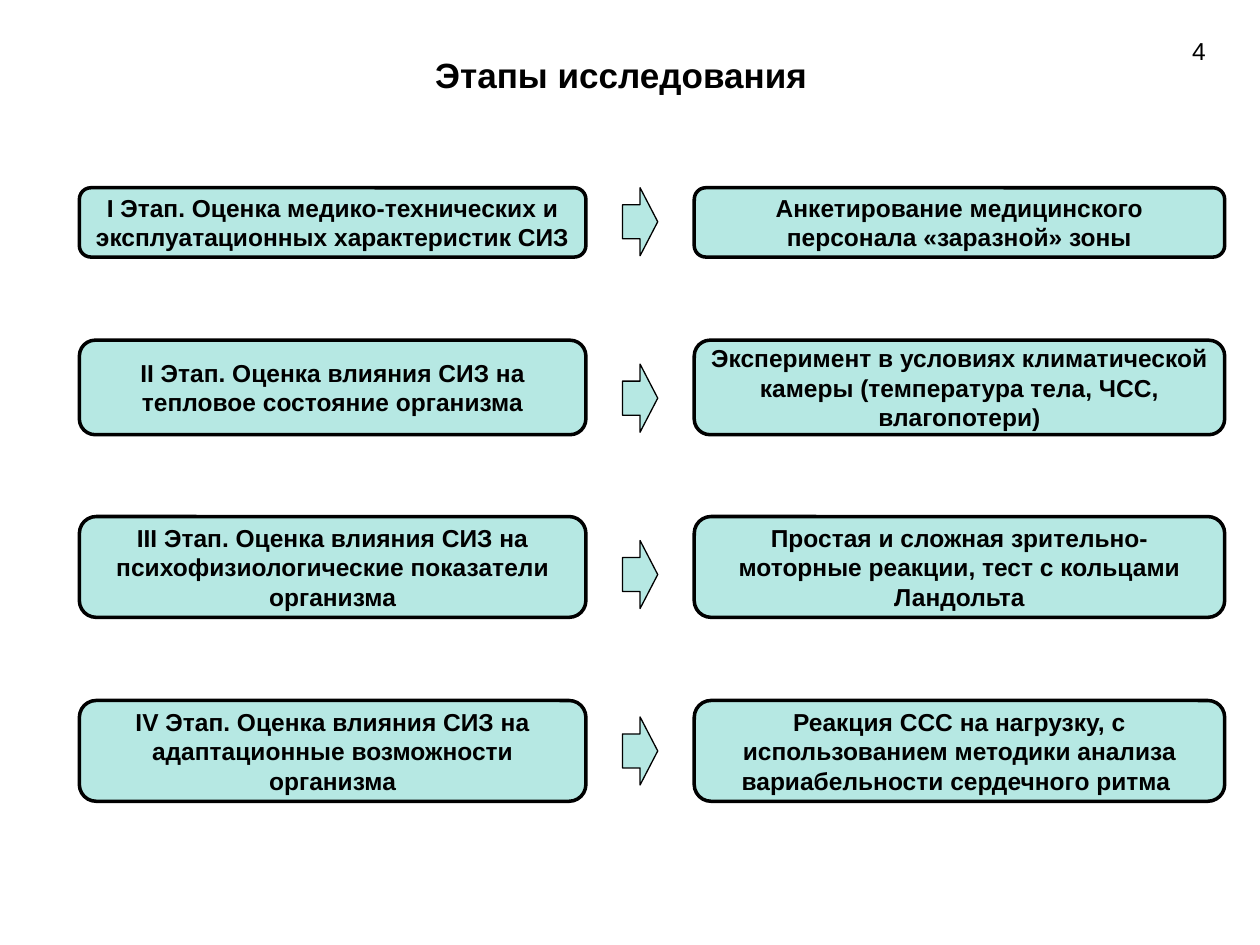
from pptx import Presentation
from pptx.dml.color import RGBColor
from pptx.enum.shapes import MSO_SHAPE
from pptx.enum.text import MSO_ANCHOR, PP_ALIGN
from pptx.util import Inches, Pt

COLORS = {"fill": "B6E8E3", "ink": "000000"}
FRAME = {
    "word_wrap": True,
    "margin_left": Inches(0.08),
    "margin_right": Inches(0.08),
    "margin_top": Inches(0.03),
    "margin_bottom": Inches(0.03),
}

# top and height of each row, stage, method
STAGES = [
    (1.49, 0.55, "I Этап. Оценка медико-технических и эксплуатационных характеристик СИЗ",
     "Анкетирование медицинского персонала «заразной» зоны"),
    (2.7, 0.75, "II Этап. Оценка влияния СИЗ на тепловое состояние организма",
     "Эксперимент в условиях климатической камеры (температура тела, ЧСС, влагопотери)"),
    (4.1, 0.8, "III Этап. Оценка влияния СИЗ на психофизиологические показатели организма",
     "Простая и сложная зрительно-моторные реакции, тест с кольцами Ландольта"),
    (5.56, 0.8, "IV Этап. Оценка влияния СИЗ на адаптационные возможности организма",
     "Реакция ССС на нагрузку, с использованием методики анализа "
     "вариабельности сердечного ритма "),
]
COLUMNS = [(0.63, 4.02), (5.51, 4.21)]
ARROW_TOP, ARROW_PITCH = 1.49, 1.4


def write(sp, text, size, bold=True, anchor=MSO_ANCHOR.MIDDLE):
    tf = sp.text_frame
    for name, value in FRAME.items():
        setattr(tf, name, value)
    tf.vertical_anchor = anchor
    p = tf.paragraphs[0]
    p.alignment = PP_ALIGN.CENTER
    r = p.add_run()
    r.text = text
    for name, value in {"name": "Arial", "size": Pt(size), "bold": bold}.items():
        setattr(r.font, name, value)
    r.font.color.rgb = RGBColor.from_string(COLORS["ink"])


def add_outlined(kind, left, top, width, height, line):
    sp = s.shapes.add_shape(kind, Inches(left), Inches(top), Inches(width), Inches(height))
    sp.shadow.inherit = False
    sp.fill.solid()
    sp.fill.fore_color.rgb = RGBColor.from_string(COLORS["fill"])
    sp.line.color.rgb = RGBColor.from_string(COLORS["ink"])
    sp.line.width = Pt(line)
    return sp


prs = Presentation()
prs.slide_width, prs.slide_height = Inches(10), Inches(7.5)
s = prs.slides.add_slide(prs.slide_layouts[5])

title = s.shapes.title
title.left, title.top = Inches(1.11), Inches(0.37)
title.width, title.height = Inches(7.64), Inches(0.44)
write(title, "Этапы исследования", 20)

number = s.shapes.add_textbox(Inches(9.31), Inches(0.25), Inches(0.41), Inches(0.31))
write(number, "4", 14, bold=False)

for i, (top, height, *texts) in enumerate(STAGES):
    for (left, width), text in zip(COLUMNS, texts):
        box = add_outlined(MSO_SHAPE.ROUNDED_RECTANGLE, left, top, width, height, 2)
        write(box, text, 14)
    add_outlined(MSO_SHAPE.RIGHT_ARROW, 4.94, ARROW_TOP + i * ARROW_PITCH, 0.28, 0.54, 0.75)

prs.save("out.pptx")
